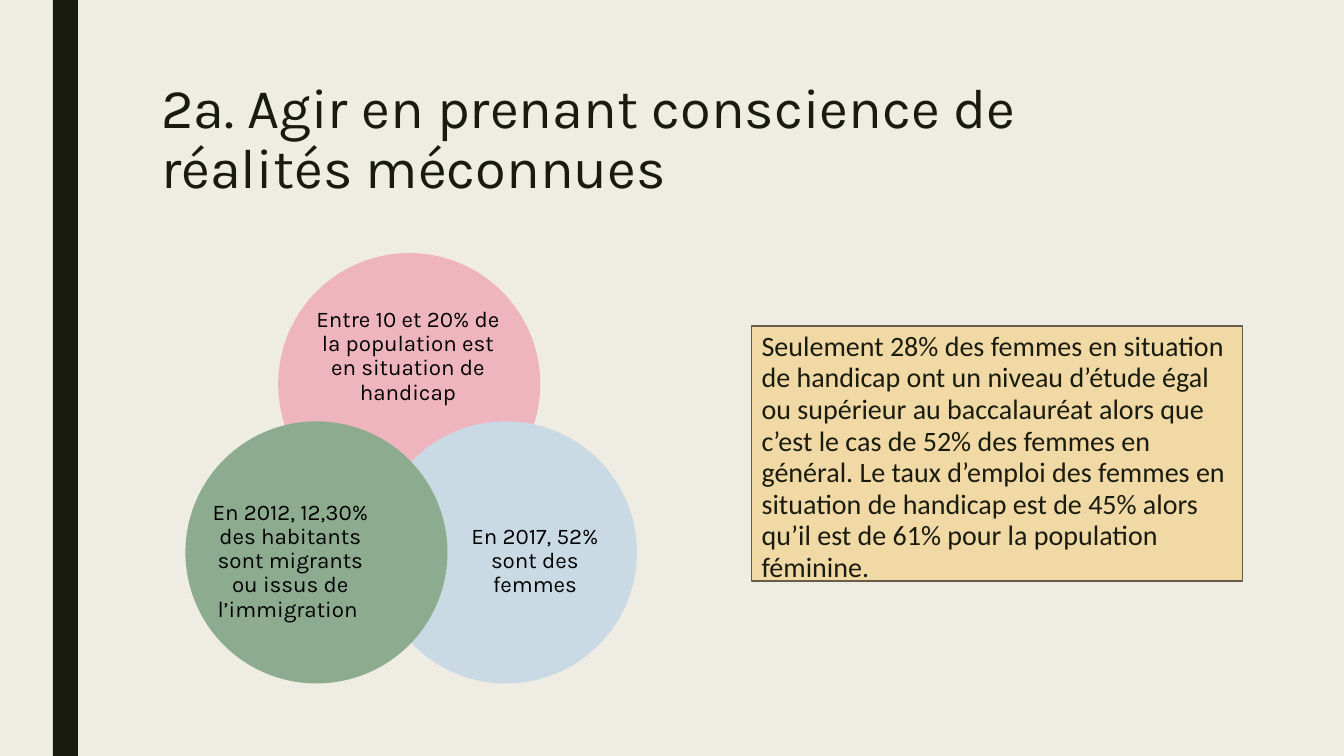
from pptx import Presentation
from pptx.dml.color import RGBColor
from pptx.enum.shapes import MSO_SHAPE
from pptx.enum.text import MSO_ANCHOR, PP_ALIGN
from pptx.util import Inches, Pt

RECTANGLE, OVAL = MSO_SHAPE.RECTANGLE, MSO_SHAPE.OVAL
TOP, MIDDLE = MSO_ANCHOR.TOP, MSO_ANCHOR.MIDDLE
LEFT, CENTER = PP_ALIGN.LEFT, PP_ALIGN.CENTER

COLORS = {
    "background": "EFEDE3",
    "ink": "191B0E",
    "black": "000000",
    "pink": "EEB5BF",
    "blue": "C9DAE4",
    "green": "8DAB8E",
    "sand": "F0D9A5",
    "border": "675C49",
}

# Circle left and top in percent of the slide; label box in shares of the circle.
VENN_WIDTH, VENN_HEIGHT = 19.5, 34.67
VENN = [
    ("pink", 20.7, 33.47, (0.13, 0.17, 0.73, 0.45),
     "Entre 10 et 20% de la population est en situation de handicap"),
    ("blue", 27.9, 55.73, (0.31, 0.26, 0.6, 0.55),
     "En 2017, 52% sont des femmes"),
    ("green", 13.8, 55.73, (0.1, 0.26, 0.6, 0.55),
     "En 2012, 12,30% des habitants sont migrants ou issus de l’immigration "),
]


class SlideBuilder:
    """Draws on one slide, with boxes given in percent of the slide's size."""

    heading_font, body_font = "Karla", "Calibri"

    def __init__(self, presentation):
        self.width = presentation.slide_width
        self.height = presentation.slide_height
        self.slide = presentation.slides.add_slide(presentation.slide_layouts[6])
        background = self.slide.background.fill
        background.solid()
        background.fore_color.rgb = self.color("background")

    def color(self, name):
        return RGBColor.from_string(COLORS[name])

    def place(self, left, top, width, height):
        """Turn a box in percent into slide units."""
        return (round(left * self.width / 100), round(top * self.height / 100),
                round(width * self.width / 100), round(height * self.height / 100))

    def shape(self, kind, box, fill, line=None):
        shape = self.slide.shapes.add_shape(kind, *self.place(*box))
        shape.shadow.inherit = False
        shape.fill.solid()
        shape.fill.fore_color.rgb = self.color(fill)
        if line:
            shape.line.color.rgb = self.color(line)
            shape.line.width = Pt(0.75)
        else:
            shape.line.fill.background()
        return shape

    def set_text(self, shape, text, size, font, color, spacing,
                 anchor=TOP, alignment=LEFT):
        frame = shape.text_frame
        frame.text = text
        frame.word_wrap = True
        frame.vertical_anchor = anchor
        paragraph = frame.paragraphs[0]
        paragraph.alignment = alignment
        paragraph.line_spacing = spacing
        run_font = paragraph.runs[0].font
        run_font.name = font
        run_font.size = Pt(size)
        run_font.color.rgb = self.color(color)

    def title(self, box, text):
        shape = self.slide.shapes.add_textbox(*self.place(*box))
        self.set_text(shape, text, 40, self.heading_font, "ink", 0.89)

    def label(self, box, text):
        shape = self.slide.shapes.add_textbox(*self.place(*box))
        frame = shape.text_frame
        frame.margin_left = frame.margin_right = 0
        frame.margin_top = frame.margin_bottom = 0
        self.set_text(shape, text, 16, self.heading_font, "black", 0.9, MIDDLE, CENTER)

    def venn_circle(self, fill, left, top, inset, text):
        self.shape(OVAL, (left, top, VENN_WIDTH, VENN_HEIGHT), fill)
        x, y, width, height = inset
        self.label((left + x * VENN_WIDTH, top + y * VENN_HEIGHT,
                    width * VENN_WIDTH, height * VENN_HEIGHT), text)

    def panel(self, box, text):
        shape = self.shape(RECTANGLE, box, "sand", "border")
        self.set_text(shape, text, 20, self.body_font, "ink", 0.94)


def main():
    presentation = Presentation()
    presentation.slide_width = Inches(13.33)
    presentation.slide_height = Inches(7.5)

    builder = SlideBuilder(presentation)
    builder.shape(RECTANGLE, (3.93, 0, 1.87, 100), "ink")
    builder.title((11.25, 10, 78.75, 21.6),
                  "2a. Agir en prenant conscience de réalités méconnues")
    for circle in VENN:
        builder.venn_circle(*circle)
    builder.panel(
        (55.93, 43.13, 36.5, 33.73),
        "Seulement 28% des femmes en situation de handicap ont un niveau d’étude "
        "égal ou supérieur au baccalauréat alors que c’est le cas de 52% des femmes "
        "en général. Le taux d’emploi des femmes en situation de handicap est de 45% "
        "alors qu’il est de 61% pour la population féminine.")

    presentation.save("out.pptx")


if __name__ == "__main__":
    main()
